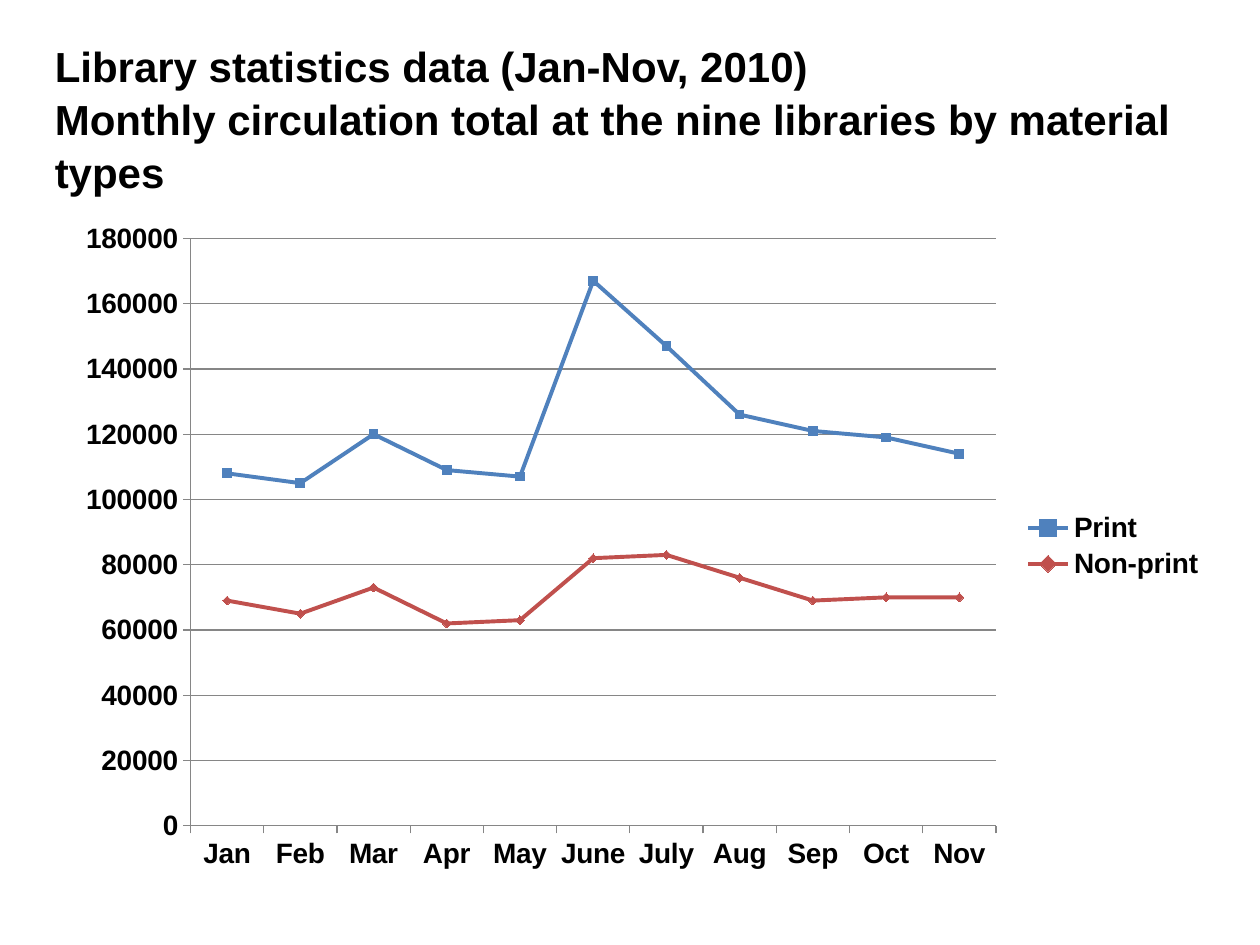
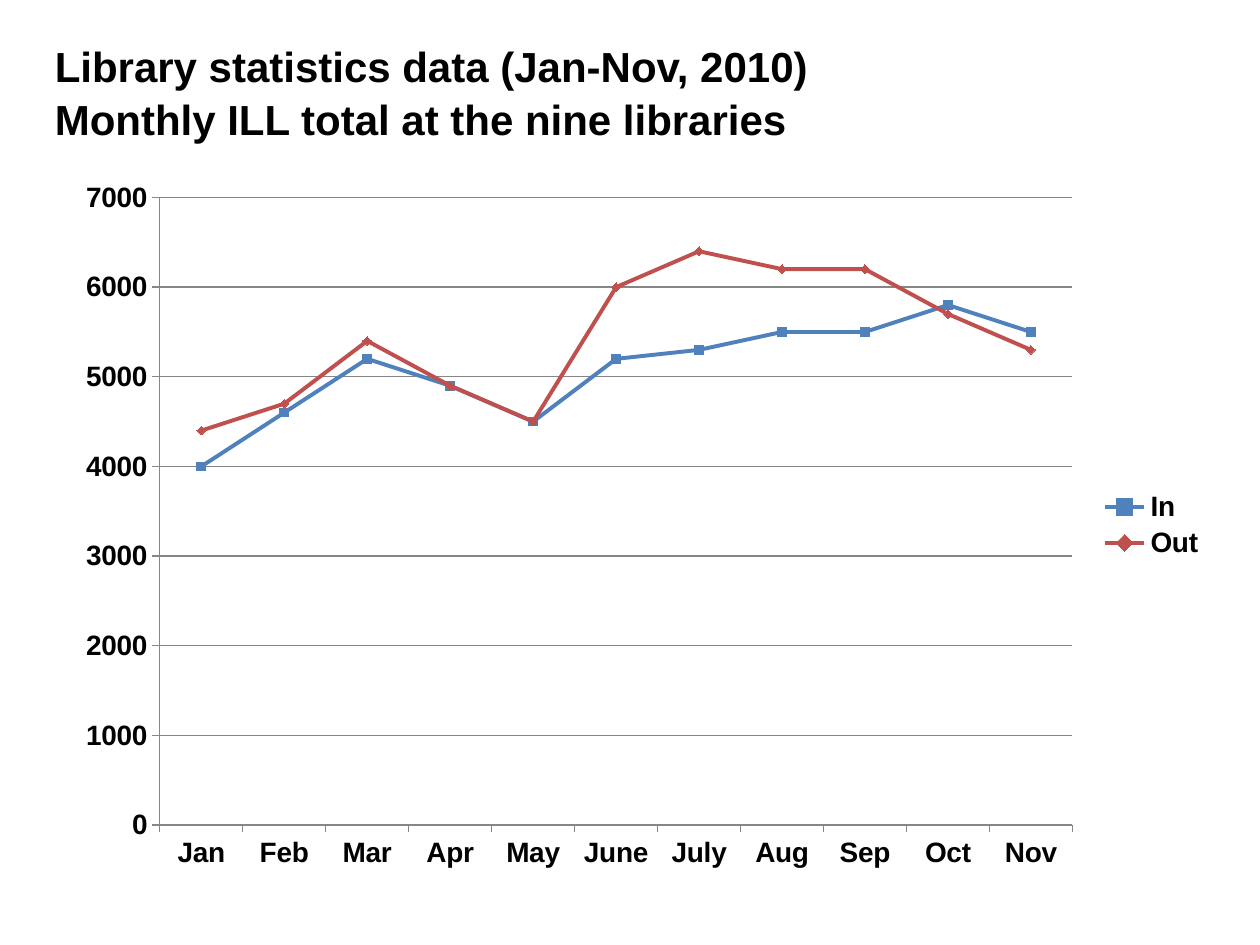
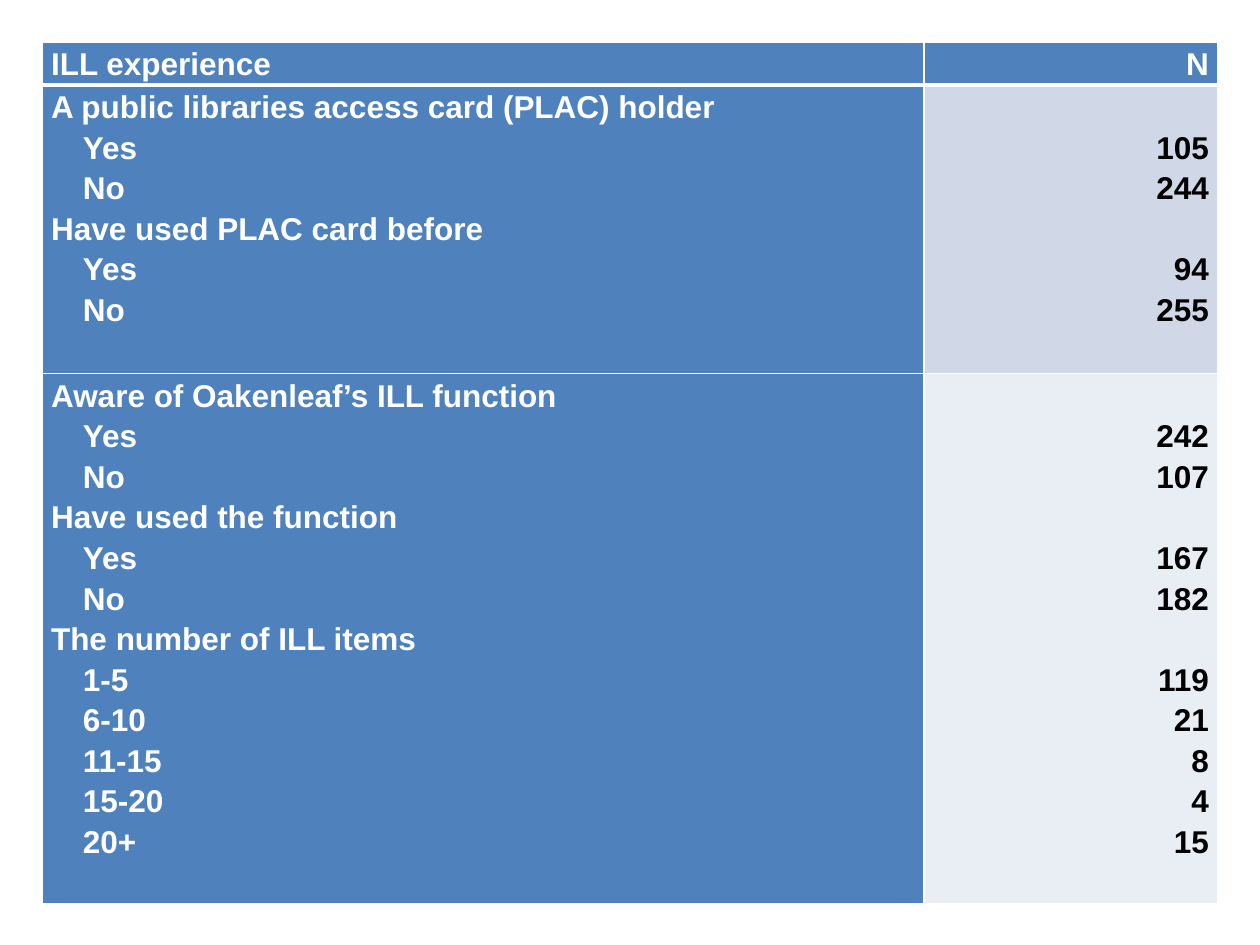
import collections

import lxml.etree
import pptx
import pptx.chart.data
import pptx.dml.color
import pptx.enum.chart
import pptx.enum.text
import pptx.oxml.ns
import pptx.util

Cm = pptx.util.Cm
Pt = pptx.util.Pt
Box = collections.namedtuple("Box", "left top width height")

FONT = "Arial"
COLORS = {
    "text": "000000",
    "white": "FFFFFF",
    "blue": "4F81BD",
    "red": "C0504D",
    "grid": "868686",
    "band_dark": "D0D8E8",
    "band_light": "E9EDF4",
}
HEADING = "Library statistics data (Jan-Nov, 2010)"
MONTHS = ["Jan", "Feb", "Mar", "Apr", "May", "June", "July", "Aug", "Sep", "Oct", "Nov"]
CIRCULATION = {
    "Print": [108000, 105000, 120000, 109000, 107000, 167000, 147000, 126000, 121000, 119000, 114000],
    "Non-print": [69000, 65000, 73000, 62000, 63000, 82000, 83000, 76000, 69000, 70000, 70000],
}
LOANS = {
    "In": [4000, 4600, 5200, 4900, 4500, 5200, 5300, 5500, 5500, 5800, 5500],
    "Out": [4400, 4700, 5400, 4900, 4500, 6000, 6400, 6200, 6200, 5700, 5300],
}
CARD_ANSWERS = {
    "A public libraries access card (PLAC) holder": {"Yes": 105, "No": 244},
    "Have used PLAC card before": {"Yes": 94, "No": 255},
}
FUNCTION_ANSWERS = {
    "Aware of Oakenleaf’s ILL function": {"Yes": 242, "No": 107},
    "Have used the function": {"Yes": 167, "No": 182},
    "The number of ILL items": {"1-5": 119, "6-10": 21, "11-15": 8, "15-20": 4, "20+": 15},
}
ANSWER_LINE = 23.2


def rgb(name):
    """Return the named colour."""
    return pptx.dml.color.RGBColor.from_string(COLORS[name])


def style_font(font, size, color="text"):
    """Apply the shared bold typeface."""
    font.name = FONT
    font.size = Pt(size)
    font.bold = True
    font.color.rgb = rgb(color)


def add_title(page, box, subject):
    """Fill the title placeholder with the heading and its subject."""
    title = page.shapes.title
    title.left, title.top, title.width, title.height = map(Cm, box)
    frame = title.text_frame
    frame.text = f"{HEADING}\n{subject}"
    frame.word_wrap = True
    frame.auto_size = pptx.enum.text.MSO_AUTO_SIZE.NONE
    frame.vertical_anchor = pptx.enum.text.MSO_ANCHOR.TOP
    for para in frame.paragraphs:
        para.alignment = pptx.enum.text.PP_ALIGN.LEFT
        para.line_spacing = 1.05
        for span in para.runs:
            style_font(span.font, 24)


def style_axis(axis):
    """Give an axis a thin grey line and outward ticks."""
    axis.major_tick_mark = pptx.enum.chart.XL_TICK_MARK.OUTSIDE
    axis.minor_tick_mark = pptx.enum.chart.XL_TICK_MARK.NONE
    axis.format.line.color.rgb = rgb("grid")
    axis.format.line.width = Pt(0.75)


def style_series(series, color, marker_style):
    """Draw a series as a straight line with matching markers."""
    series.smooth = False
    series.format.line.color.rgb = rgb(color)
    series.format.line.width = Pt(2.25)
    marker = series.marker
    marker.style = marker_style
    marker.size = 5
    marker.format.fill.solid()
    marker.format.fill.fore_color.rgb = rgb(color)
    marker.format.line.color.rgb = rgb(color)


def add_line_chart(page, box, totals, top_value, step):
    """Add a line chart of monthly totals."""
    data = pptx.chart.data.CategoryChartData(number_format="General")
    data.categories = MONTHS
    for name, values in totals.items():
        data.add_series(name, values)
    kind = pptx.enum.chart.XL_CHART_TYPE.LINE_MARKERS
    chart = page.shapes.add_chart(kind, *map(Cm, box), data).chart
    chart.has_title = False
    style_font(chart.font, 16)
    chart.has_legend = True
    chart.legend.position = pptx.enum.chart.XL_LEGEND_POSITION.RIGHT
    chart.legend.include_in_layout = False
    style_axis(chart.category_axis)
    axis = chart.value_axis
    style_axis(axis)
    axis.minimum_scale, axis.maximum_scale, axis.major_unit = 0, top_value, step
    axis.has_major_gridlines = True
    axis.major_gridlines.format.line.color.rgb = rgb("grid")
    axis.major_gridlines.format.line.width = Pt(0.75)
    chart.plots[0].vary_by_categories = False
    markers = pptx.enum.chart.XL_MARKER_STYLE
    looks = [("blue", markers.SQUARE), ("red", markers.DIAMOND)]
    for series, look in zip(chart.plots[0].series, looks):
        style_series(series, *look)


def build_chart_page(deck, subject, title_box, chart_box, totals, top_value, step):
    """Build a slide with a title above a line chart."""
    page = deck.slides.add_slide(deck.slide_layouts[5])
    add_title(page, title_box, subject)
    add_line_chart(page, chart_box, totals, top_value, step)


def set_borders(cell, widths):
    """Draw white cell borders, with widths in points by side."""
    properties = cell._tc.get_or_add_tcPr()
    for position, side in enumerate("LRTB"):
        line = lxml.etree.Element(pptx.oxml.ns.qn(f"a:ln{side}"), w=str(Pt(widths.get(side, 1))))
        fill = lxml.etree.SubElement(line, pptx.oxml.ns.qn("a:solidFill"))
        lxml.etree.SubElement(fill, pptx.oxml.ns.qn("a:srgbClr"), val=COLORS["white"])
        properties.insert(position, line)


def fill_cell(cell, lines, fill, color, borders):
    """Write lines of text into a filled and bordered cell."""
    cell.fill.solid()
    cell.fill.fore_color.rgb = rgb(fill)
    cell.margin_left = cell.margin_right = Cm(0.18)
    cell.margin_top = cell.margin_bottom = 0
    cell.text_frame.text = "\n".join(lines)
    for para in cell.text_frame.paragraphs:
        para.line_spacing = 1.15
        for span in para.runs:
            style_font(span.font, 18, color)
    set_borders(cell, borders)


def fill_answers(label_cell, count_cell, questions, band, borders):
    """List questions with indented answers beside their counts."""
    labels = [text for question, answers in questions.items() for text in (question, *answers)]
    counts = [str(count) for answers in questions.values() for count in answers.values()]
    fill_cell(label_cell, labels, "blue", "white", borders)
    fill_cell(count_cell, counts, band, "text", borders)
    for para in label_cell.text_frame.paragraphs:
        if para.text not in questions:
            para._p.get_or_add_pPr().set("marL", str(Cm(0.64)))
    count_cell.margin_top = Pt(ANSWER_LINE)
    first = 0
    for answers in questions.values():
        if first:
            count_cell.text_frame.paragraphs[first].space_before = Pt(ANSWER_LINE)
        first += len(answers)


def build_table_page(deck, box):
    """Build the slide with the table of ILL experience."""
    page = deck.slides.add_slide(deck.slide_layouts[6])
    table = page.shapes.add_table(3, 2, *map(Cm, box)).table
    for column, share in zip(table.columns, (0.75, 0.25)):
        column.width = Cm(box.width * share)
    for row, height in zip(table.rows, (0.86, 5.82, 10.69)):
        row.height = Cm(height)
    for column, text in enumerate(("ILL experience", "N")):
        fill_cell(table.cell(0, column), [text], "blue", "white", {"B": 3})
    fill_answers(table.cell(1, 0), table.cell(1, 1), CARD_ANSWERS, "band_dark", {"T": 3})
    fill_answers(table.cell(2, 0), table.cell(2, 1), FUNCTION_ANSWERS, "band_light", {})
    for row in range(3):
        for para in table.cell(row, 1).text_frame.paragraphs:
            para.alignment = pptx.enum.text.PP_ALIGN.RIGHT


def main():
    """Build and save the deck."""
    deck = pptx.Presentation()
    deck.slide_width, deck.slide_height = Cm(25.4), Cm(19.05)
    build_chart_page(
        deck, "Monthly circulation total at the nine libraries by material types",
        Box(0.85, 0.64, 24.55, 4.37), Box(1.27, 4.23, 23.28, 13.55),
        CIRCULATION, 180000, 20000)
    build_chart_page(
        deck, "Monthly ILL total at the nine libraries",
        Box(0.85, 0.64, 24.13, 2.31), Box(1.27, 3.39, 23.28, 14.39),
        LOANS, 7000, 1000)
    build_table_page(deck, Box(0.85, 0.85, 23.7, 17.37))
    deck.save("out.pptx")


if __name__ == "__main__":
    main()
